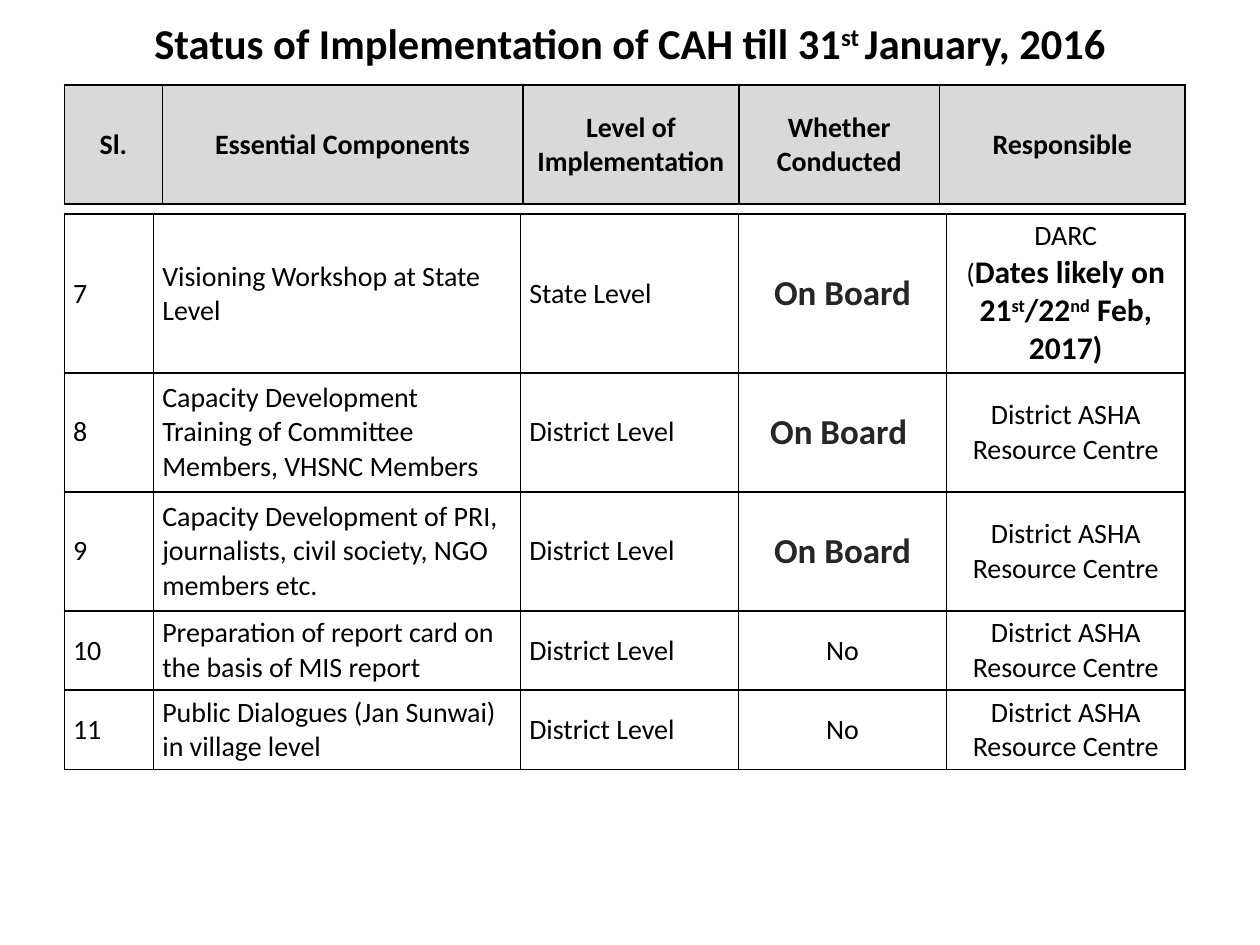
from lxml import etree
from pptx import Presentation
from pptx.dml.color import RGBColor
from pptx.enum.text import MSO_ANCHOR, PP_ALIGN
from pptx.oxml.ns import qn
from pptx.util import Pt

MIDDLE = MSO_ANCHOR.MIDDLE
LEFT, CENTER = PP_ALIGN.LEFT, PP_ALIGN.CENTER
COLORS = {"ink": "000000", "status": "262626", "header": "D9D9D9", "border": "000000"}


class StatusSlide:
    """Holds the style and the current slide, and adds its elements."""

    font_name = "Calibri"
    body_size = 16
    side_inset = 5
    border_width = 1

    def __init__(self, presentation):
        self.slide = presentation.slides.add_slide(presentation.slide_layouts[6])

    def rgb(self, name):
        return RGBColor.from_string(COLORS[name])

    def set_text(self, paragraph, runs, size=body_size, bold=False, color="ink", align=CENTER):
        paragraph.alignment = align
        font = paragraph.font
        font.name, font.size, font.bold = self.font_name, Pt(size), bold
        font.color.rgb = self.rgb(color)
        for text, style in runs:
            run = paragraph.add_run()
            run.text = text
            if "size" in style:
                run.font.size = Pt(style["size"])
            if "bold" in style:
                run.font.bold = style["bold"]
            if style.get("raised"):
                run.font._element.set("baseline", "30000")

    def title(self, runs, left, top, width, height, size):
        frame = self.slide.shapes.add_textbox(Pt(left), Pt(top), Pt(width), Pt(height)).text_frame
        frame.word_wrap = True
        frame.vertical_anchor = MIDDLE
        frame.margin_top = frame.margin_bottom = 0
        self.set_text(frame.paragraphs[0], runs, size=size, bold=True)

    def table(self, left, top, widths, heights):
        frame = self.slide.shapes.add_table(
            len(heights), len(widths), Pt(left), Pt(top), Pt(sum(widths)), Pt(sum(heights)))
        grid = frame.table
        grid.first_row = grid.horz_banding = False
        for column, width in zip(grid.columns, widths):
            column.width = Pt(width)
        for row, height in zip(grid.rows, heights):
            row.height = Pt(height)
        for cell in grid.iter_cells():
            self.border(cell)
        return grid

    def border(self, cell):
        properties = cell._tc.get_or_add_tcPr()
        for side in ("a:lnL", "a:lnR", "a:lnT", "a:lnB"):
            line = etree.SubElement(properties, qn(side), w=str(Pt(self.border_width)))
            fill = etree.SubElement(line, qn("a:solidFill"))
            etree.SubElement(fill, qn("a:srgbClr"), val=COLORS["border"])

    def cell(self, cell, paragraphs, fill=None, **style):
        cell.vertical_anchor = MIDDLE
        cell.margin_left = cell.margin_right = Pt(self.side_inset)
        cell.margin_top = cell.margin_bottom = 0
        if fill:
            cell.fill.solid()
            cell.fill.fore_color.rgb = self.rgb(fill)
        else:
            cell.fill.background()
        frame = cell.text_frame
        for index, runs in enumerate(paragraphs):
            paragraph = frame.add_paragraph() if index else frame.paragraphs[0]
            self.set_text(paragraph, runs, **style)


def plain(text):
    return [[(text, {})]]


STRONG = {"size": 18, "bold": True}
RAISED = {**STRONG, "raised": True}
TITLE = [("Status of Implementation of CAH till 31", {}), ("st ", {"raised": True}),
         ("January, 2016", {})]
HEADINGS = ["Sl.", "Essential Components", "Level of Implementation", "Whether Conducted",
            "Responsible"]
VISIONING_DATES = [
    [("DARC", {})],
    [("(", {}), ("Dates likely on 21", STRONG), ("st", RAISED), ("/22", STRONG),
     ("nd", RAISED), (" Feb, 2017)", STRONG)],
]
DISTRICT_CENTRE = plain("District ASHA Resource Centre")
COMPONENTS = [
    ("Visioning Workshop at State Level", "State Level", "On Board", VISIONING_DATES),
    ("Capacity Development Training of Committee Members, VHSNC Members",
     "District Level", "On Board ", DISTRICT_CENTRE),
    ("Capacity Development of PRI, journalists, civil society, NGO members etc.",
     "District Level", "On Board", DISTRICT_CENTRE),
    ("Preparation of report card on the basis of MIS report",
     "District Level", "No", DISTRICT_CENTRE),
    ("Public Dialogues (Jan Sunwai) in village level",
     "District Level", "No", DISTRICT_CENTRE),
]
FIRST_NUMBER = 7
TABLE_LEFT = 36.8


def main():
    presentation = Presentation()
    presentation.slide_width, presentation.slide_height = Pt(720), Pt(540)
    page = StatusSlide(presentation)
    page.title(TITLE, 36, 7, 648, 34, 24.3)

    body = page.table(TABLE_LEFT, 122.4, [51, 209.7, 124.6, 118.9, 136.2],
                      [90.7, 68, 68, 45.4, 45.4])
    on_board = {"size": 20, "bold": True, "color": "status"}
    for row, (component, level, conducted, responsible) in enumerate(COMPONENTS):
        for column, text in enumerate((str(FIRST_NUMBER + row), component, level)):
            page.cell(body.cell(row, column), plain(text), align=LEFT)
        page.cell(body.cell(row, 3), plain(conducted), **({} if conducted == "No" else on_board))
        page.cell(body.cell(row, 4), responsible)

    header = page.table(TABLE_LEFT, 48.7, [56, 206, 123.5, 114.7, 10, 130.2], [68])
    header.cell(0, 4).merge(header.cell(0, 5))
    for column, heading in enumerate(HEADINGS):
        page.cell(header.cell(0, column), plain(heading), fill="header", bold=True)

    presentation.save("out.pptx")


if __name__ == "__main__":
    main()
